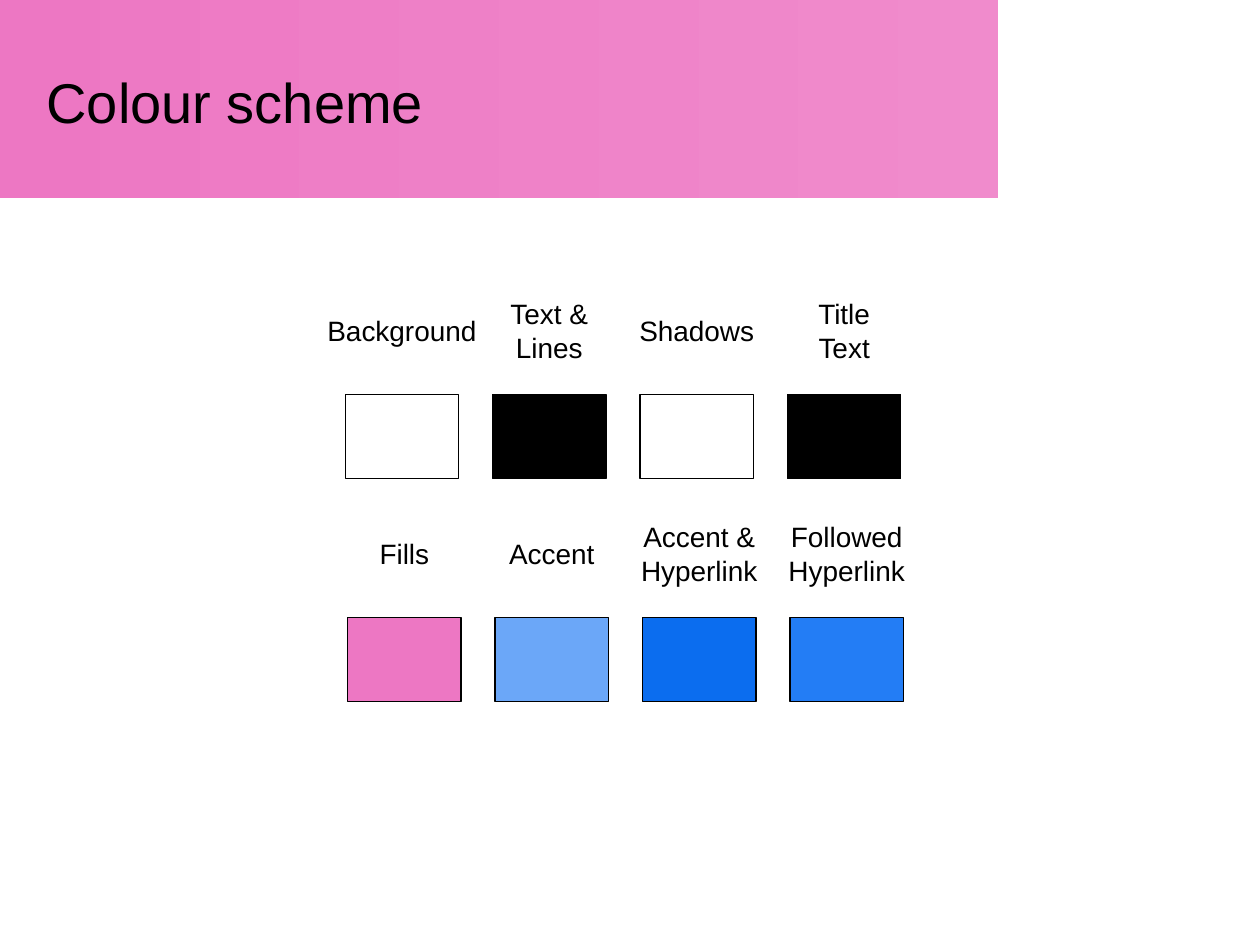
from pptx import Presentation
from pptx.dml.color import RGBColor as Rgb
from pptx.enum.shapes import MSO_SHAPE as Kind
from pptx.enum.text import MSO_ANCHOR as Anchor, PP_ALIGN as Align
from pptx.util import Inches, Pt

PINK, PALE, BLACK, WHITE = "ED77C3", "F08BCC", "000000", "FFFFFF"

# Each row: left edge, top edge, then label and fill per swatch
ROWS = [
    (2.74, 3.13, [("Background", WHITE), ("Text &\nLines", BLACK),
                  ("Shadows", WHITE), ("Title\vText", BLACK)]),
    (2.76, 4.9, [("Fills", PINK), ("Accent", "6BA7F8"),
                 ("Accent &\nHyperlink", "0B6DEF"),
                 ("Followed\nHyperlink", "237DF5")]),
]
STEP = 1.17                 # column pitch
WIDE, HIGH = 0.9, 0.67      # swatch size
TAG_W, TAG_H = 1.4, 0.64    # label size
RISE = 0.83                 # label top above swatch top


def hue(code):
    return Rgb.from_string(code)


class Board:
    """Holds the style and the current slide."""
    font = {"name": "Arial", "size": Pt(16)}
    frame = {"word_wrap": False, "vertical_anchor": Anchor.MIDDLE,
             "margin_top": 0, "margin_bottom": 0}

    def __init__(self, deck):
        self.slide = deck.slides.add_slide(deck.slide_layouts[6])

    def put(self, item, values):
        for name, value in values.items():
            setattr(item, name, value)

    def rect(self, *spot):
        box = self.slide.shapes.add_shape(Kind.RECTANGLE, *map(Inches, spot))
        box.shadow.inherit = False
        return box

    def band(self, *spot):
        box = self.rect(*spot)
        box.line.fill.background()
        box.fill.gradient()
        box.fill.gradient_angle = 0
        for stop, code in zip(box.fill.gradient_stops, (PINK, PALE)):
            stop.color.rgb = hue(code)

    def swatch(self, code, *spot):
        box = self.rect(*spot)
        box.fill.solid()
        box.fill.fore_color.rgb = hue(code)
        box.line.color.rgb = hue(BLACK)
        box.line.width = Pt(0.75)

    def text(self, words, spot, align=Align.CENTER, **font):
        box = self.slide.shapes.add_textbox(*map(Inches, spot))
        self.put(box.text_frame, self.frame)
        box.text_frame.text = words
        for para in box.text_frame.paragraphs:
            para.alignment = align
            self.put(para.font, {**self.font, **font})
            para.font.color.rgb = hue(BLACK)


def main():
    deck = Presentation()
    deck.slide_width, deck.slide_height = Inches(10), Inches(7.5)
    board = Board(deck)

    # Title band
    board.band(0, 0, 7.92, 1.57)
    board.text("Colour scheme", (0.27, 0.3, 7.48, 1.01), Align.LEFT,
               size=Pt(32))

    # Labelled swatches
    for left, top, cells in ROWS:
        for col, (words, code) in enumerate(cells):
            x = left + col * STEP
            board.swatch(code, x, top, WIDE, HIGH)
            board.text(words, (x + (WIDE - TAG_W) / 2, top - RISE,
                               TAG_W, TAG_H))

    deck.save("out.pptx")


if __name__ == "__main__":
    main()
